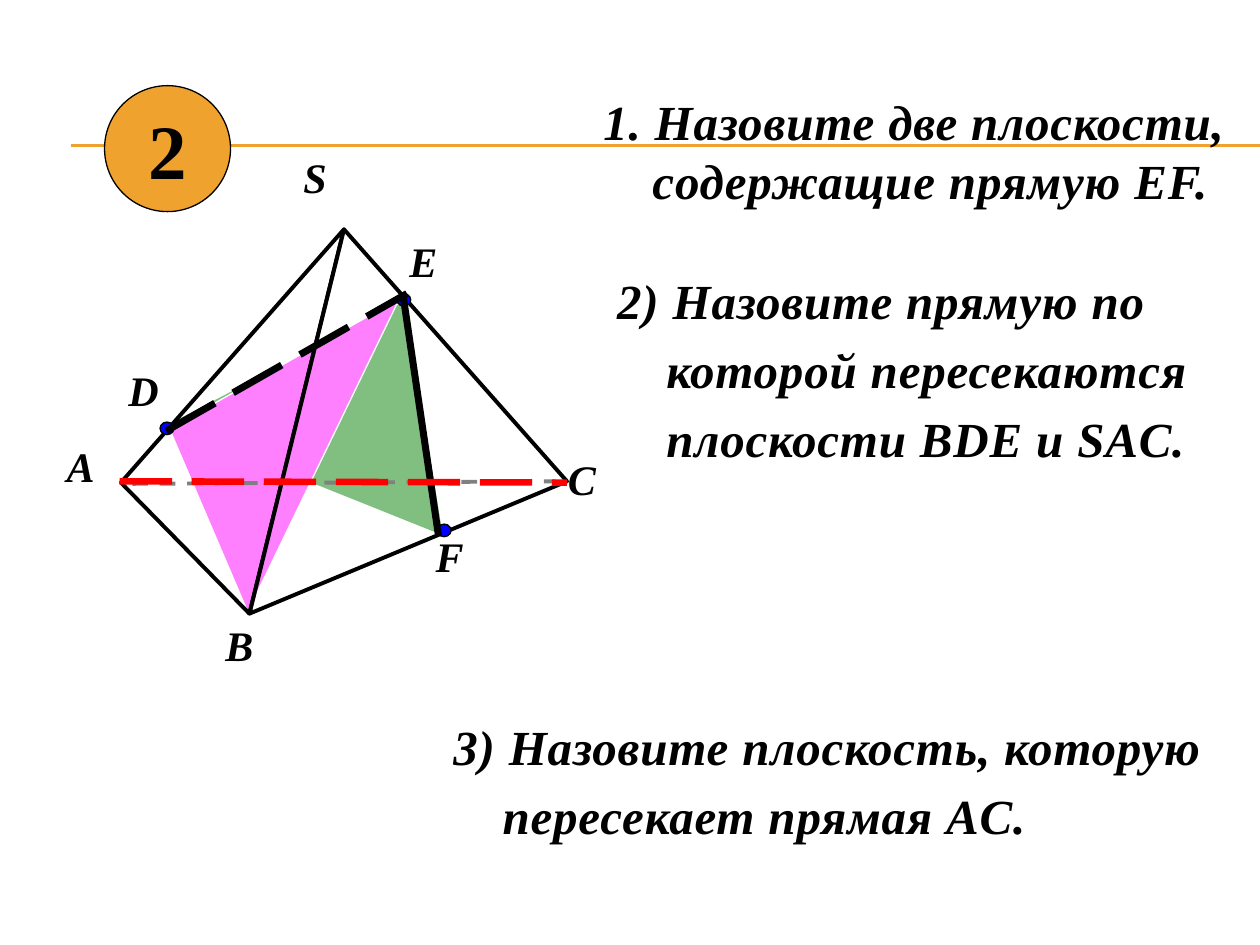
from lxml import etree
from pptx import Presentation
from pptx.dml.color import RGBColor
from pptx.enum.dml import MSO_LINE
from pptx.enum.shapes import MSO_CONNECTOR, MSO_SHAPE
from pptx.enum.text import MSO_ANCHOR, PP_ALIGN
from pptx.oxml.ns import qn
from pptx.util import Inches, Pt

STRAIGHT = MSO_CONNECTOR.STRAIGHT
ELLIPSE = MSO_SHAPE.OVAL
DASH, LONG_DASH = MSO_LINE.DASH, MSO_LINE.LONG_DASH
FONT = "Times New Roman"
COLORS = {name: RGBColor.from_string(value) for name, value in {
    "black": "000000", "white": "FFFFFF", "orange": "F0A22E", "green": "008000",
    "magenta": "FF00FF", "blue": "0000FF", "red": "FF0000",
}.items()}

presentation = Presentation()
presentation.slide_width, presentation.slide_height = Inches(10), Inches(7.5)
slide = presentation.slides.add_slide(presentation.slide_layouts[6])
shapes = slide.shapes

# Square grid: 10 columns by 7.5 rows
column = presentation.slide_width / 10
row = presentation.slide_height / 7.5


def add_line(start, end, color, width, dash=None):
    ends = [round(value * step) for value, step in zip(start + end, (column, row) * 2)]
    line = shapes.add_connector(STRAIGHT, *ends)
    line.line.color.rgb = COLORS[color]
    line.line.width = Pt(width)
    if dash:
        line.line.dash_style = dash
    etree.SubElement(line._element.spPr, qn("a:effectLst"))


def add_text(left, top, width, height, lines, size, indent=0.0):
    box = shapes.add_textbox(*(round(value * column) for value in (left, top, width, height)))
    frame = box.text_frame
    frame.word_wrap = True
    frame.text = "\n".join(lines)
    for number, paragraph in enumerate(frame.paragraphs):
        if number:
            paragraph._p.get_or_add_pPr().set("marL", str(round(indent * column)))
        font = paragraph.runs[0].font
        font.name, font.size = FONT, Pt(size)
        font.bold = font.italic = True
        font.color.rgb = COLORS["black"]
    return frame


# Horizontal rules
for height in (1.15, 1.16):
    add_line((0.56, height), (10, height), "orange", 0.75)

# Section planes, then the two front faces of the pyramid
A, B, C, S = (0.96, 3.83), (1.98, 4.87), (4.5, 3.82), (2.73, 1.82)
triangles = [
    ([(1.32, 3.37), (3.22, 2.38), (3.52, 4.25)], "green", "white", 0.75),
    ([(1.35, 3.4), (3.17, 2.37), (1.97, 4.85)], "magenta", "white", 0.75),
    ([A, B, S], "white", "black", 2.25),
    ([B, S, C], "white", "black", 2.25),
]
for points, fill, outline, width in triangles:
    is_face = outline == "black"
    if points[0] == A:
        add_line((1.05, 3.84), (4.41, 3.82), "black", 2.25, DASH)  # hidden edge
    corners = [(round(x * column), round(y * row)) for x, y in points]
    builder = shapes.build_freeform(*corners[0])
    builder.add_line_segments(corners[1:], close=is_face)
    triangle = builder.convert_to_shape()
    triangle.shadow.inherit = False
    triangle.fill.solid()
    triangle.fill.fore_color.rgb = COLORS[fill]
    triangle.line.color.rgb = COLORS[outline]
    triangle.line.width = Pt(width)
    if is_face:
        color = triangle._element.spPr.find(qn("a:solidFill")).find(qn("a:srgbClr"))
        etree.SubElement(color, qn("a:alpha"), val="50000")

# Vertex and point labels
labels = [("S", 2.31, 1.15), ("В", 1.69, 4.87), ("А", 0.43, 3.45), ("С", 4.41, 3.55),
          ("F", 3.36, 4.16), ("E", 3.15, 1.82), ("D", 0.92, 2.84)]
for letter, left, top in labels:
    add_text(left, top, 0.44, 0.5, [letter], 24)

# Points D, E, F and the numbered badge
circles = [(1.27, 3.35, 0.11, 0.1, "blue"), (3.15, 2.33, 0.11, 0.1, "blue"),
           (3.47, 4.16, 0.11, 0.1, "blue"), (0.83, 0.68, 1, 1, "orange")]
for *bounds, fill in circles:
    circle = shapes.add_shape(ELLIPSE, *(round(value * column) for value in bounds))
    circle.shadow.inherit = False
    circle.fill.solid()
    circle.fill.fore_color.rgb = COLORS[fill]
    circle.line.color.rgb = COLORS["black"]
    circle.line.width = Pt(0.75)
badge = circle.text_frame
badge.text = "2"
badge.word_wrap = False
badge.vertical_anchor = MSO_ANCHOR.MIDDLE
badge.paragraphs[0].alignment = PP_ALIGN.CENTER
badge_font = badge.paragraphs[0].runs[0].font
badge_font.name, badge_font.size, badge_font.bold = FONT, Pt(44), True
badge_font.color.rgb = COLORS["black"]

# Highlighted lines EF, DE and AC
add_line((3.48, 4.25), (3.2, 2.35), "black", 4)
add_line((1.32, 3.42), (3.23, 2.33), "black", 4, LONG_DASH)
add_line((0.95, 3.82), (4.5, 3.83), "red", 3.75, LONG_DASH)

# Questions, slightly letter-spaced, with hanging continuation lines
questions = [
    (4.69, 0.68, 5.3, 1.03, 0, ["1. Назовите две плоскости,", "cодержащие прямую EF."]),
    (4.8, 2.1, 5, 1.69, 5.6, ["2) Назовите прямую по", "которой пересекаются",
                              "плоскости BDЕ и SAC."]),
    (3.5, 5.64, 6.3, 1.13, 5.6, ["3) Назовите плоскость, которую", "пересекает прямая AC."]),
]
for left, top, width, height, gap, lines in questions:
    frame = add_text(left, top, width, height, lines, 28, indent=0.39)
    for number, paragraph in enumerate(frame.paragraphs):
        paragraph.space_before = Pt(gap if number else 0)
        paragraph.runs[0].font._element.set("spc", "50")

presentation.save("out.pptx")
